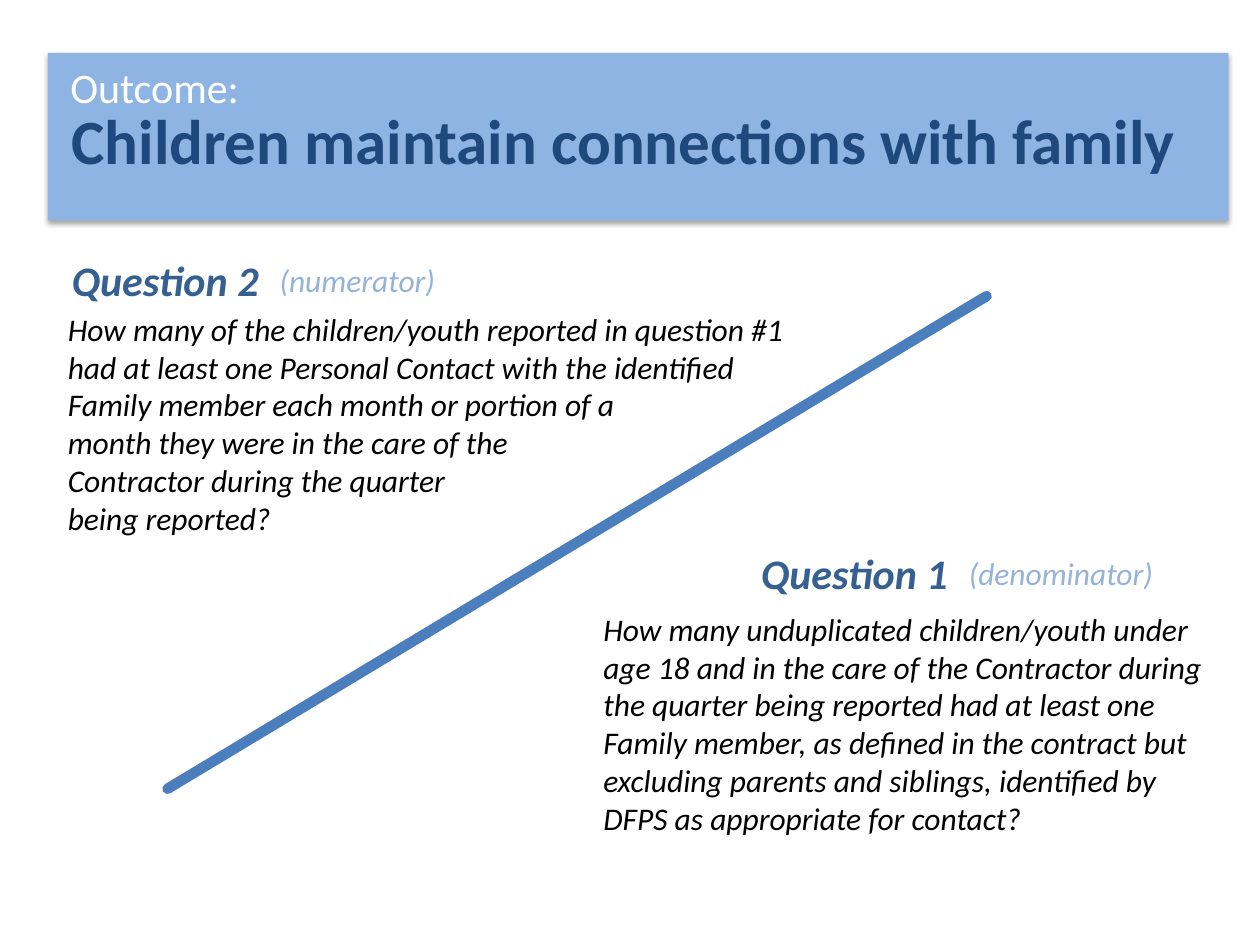
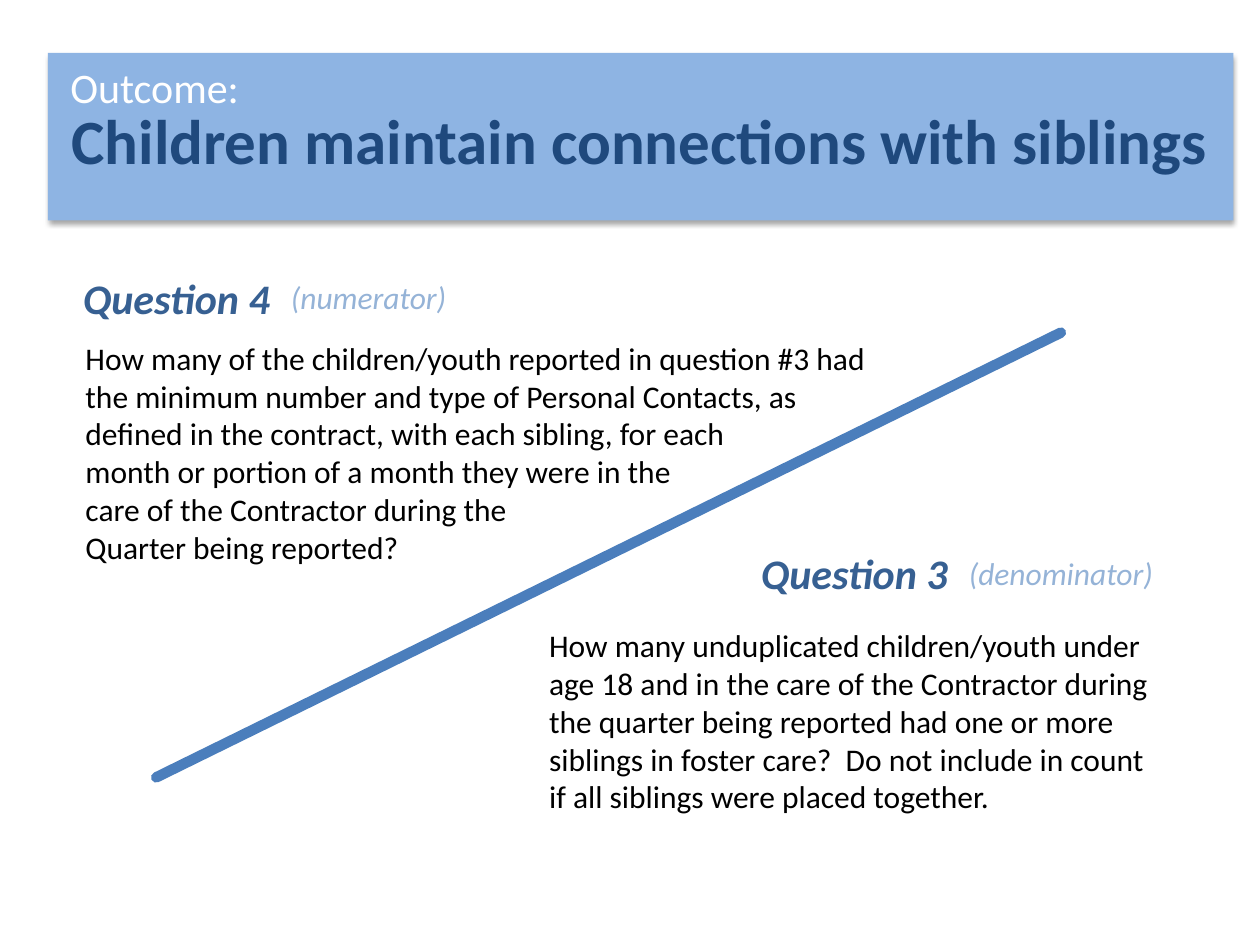
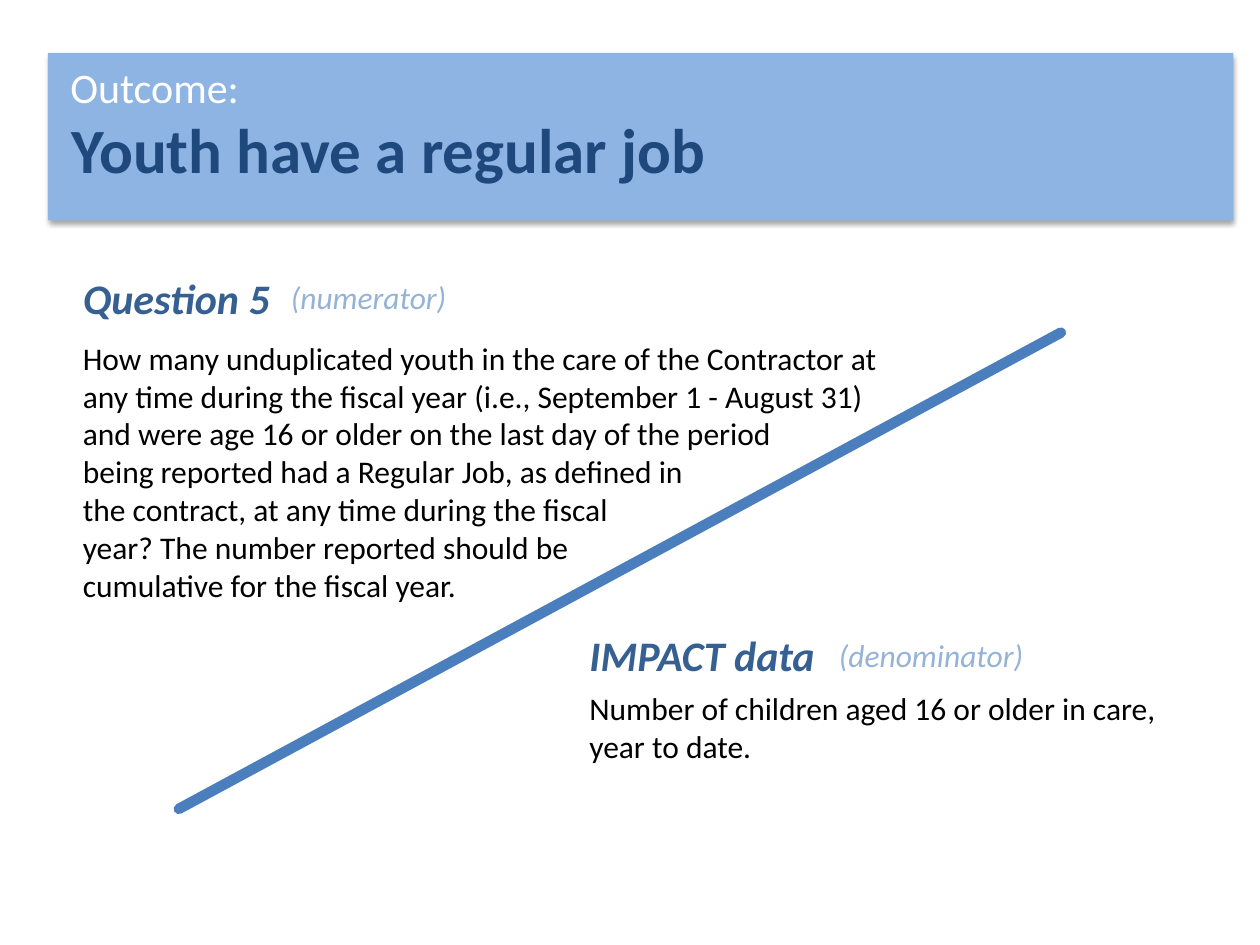
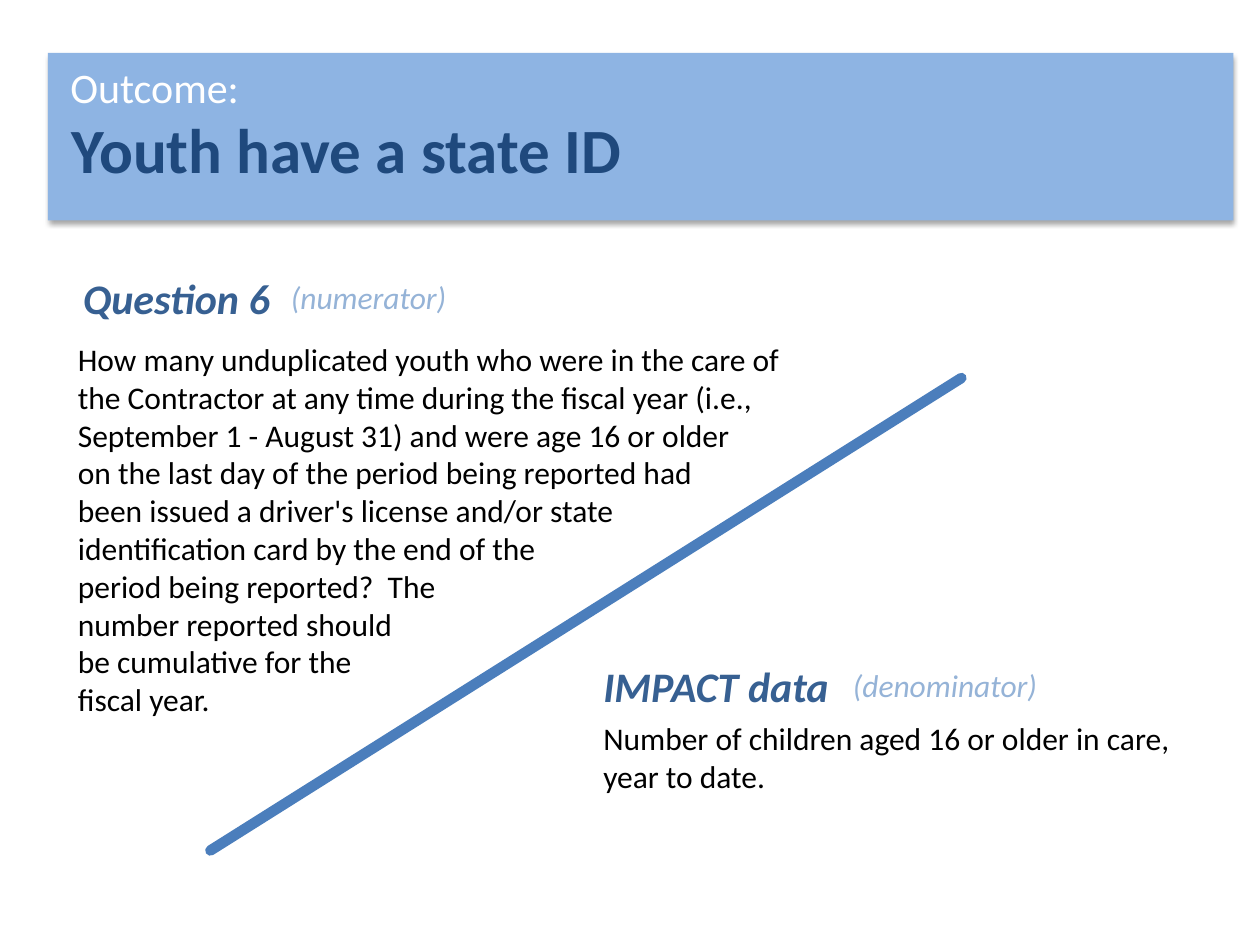
from dataclasses import dataclass

from lxml.etree import SubElement
from pptx import Presentation
from pptx.dml.color import RGBColor
from pptx.enum.shapes import MSO_CONNECTOR, MSO_SHAPE
from pptx.enum.text import MSO_AUTO_SIZE
from pptx.oxml.ns import qn
from pptx.util import Inches, Pt

# The slide is a grid of 10 columns by 7.5 rows with square cells.
COLS, ROWS = 10, 7.5
CELL = Inches(1)

FONT = "Calibri"
BAND = RGBColor(0x8E, 0xB4, 0xE3)
TITLE = RGBColor(0x1F, 0x49, 0x7D)
HEADING = RGBColor(0x37, 0x60, 0x92)
ROLE = RGBColor(0x95, 0xB3, 0xD7)
RULE = RGBColor(0x4B, 0x7E, 0xBC)
WHITE = RGBColor(0xFF, 0xFF, 0xFF)
BLACK = RGBColor(0x00, 0x00, 0x00)

BAND_W = 9.41
HEADING_W, HEADING_H = 2.46, 0.5
ROLE_DY, ROLE_H = 0.05, 0.4
ROLE_W = {"(numerator)": 1.45, "(denominator)": 1.68}
QUESTION_DX, IMPACT_DX = 1.65, 1.98


@dataclass
class Part:
    """One side of the fraction: heading, role beside it and the wording."""
    heading: str
    heading_at: tuple
    body_at: tuple
    paragraphs: list
    role_dx: float = QUESTION_DX
    italic: bool = False


def cells(*counts):
    return [int(n * CELL) for n in counts]


def add_text(slide, box, paragraphs, size, color, bold=False, italic=False, wrap=True):
    sp = slide.shapes.add_textbox(*cells(*box))
    tf = sp.text_frame
    tf.word_wrap = wrap
    tf.auto_size = MSO_AUTO_SIZE.SHAPE_TO_FIT_TEXT
    for i, text in enumerate(paragraphs):
        p = tf.paragraphs[0] if i == 0 else tf.add_paragraph()
        p.text = text
        for r in p.runs:
            r.font.name = FONT
            r.font.size = Pt(size)
            r.font.color.rgb = color
            r.font.bold = bold
            r.font.italic = italic


def add_soft_shadow(sp):
    sp.shadow.inherit = False
    effects = sp._element.spPr.find(qn("a:effectLst"))
    shadow = SubElement(effects, qn("a:outerShdw"), blurRad=str(Pt(3.1)),
                        dist=str(Pt(1.8)), dir="5400000", rotWithShape="0")
    black = SubElement(shadow, qn("a:srgbClr"), val=str(BLACK))
    SubElement(black, qn("a:alpha"), val="35000")


def add_title_band(slide, title, y, w, band_w=BAND_W):
    sp = slide.shapes.add_shape(MSO_SHAPE.RECTANGLE, *cells(0.38, 0.42, band_w, 1.33))
    sp.fill.solid()
    sp.fill.fore_color.rgb = BAND
    sp.line.fill.background()
    add_soft_shadow(sp)
    add_text(slide, (0.46, 0.44, 1.55, 0.5), ["Outcome:"], 24, WHITE, wrap=False)
    add_text(slide, (0.47, y, w, 0.71), [title], 36, TITLE, bold=True, wrap=False)


def add_fraction_line(slide, start, end):
    line = slide.shapes.add_connector(MSO_CONNECTOR.STRAIGHT, *cells(*start, *end))
    line.line.color.rgb = RULE
    line.line.width = Pt(6)
    line.line._get_or_add_ln().set("cap", "rnd")
    SubElement(line._element.spPr, qn("a:effectLst"))


def add_part(slide, part, role):
    x, y = part.heading_at
    add_text(slide, (x + part.role_dx, y + ROLE_DY, ROLE_W[role], ROLE_H), [role],
             18, ROLE, italic=True, wrap=False)
    add_text(slide, (x, y, HEADING_W, HEADING_H), [part.heading], 24, HEADING,
             bold=True, italic=True)
    add_text(slide, part.body_at, part.paragraphs, 18, BLACK, italic=part.italic)


def add_outcome(prs, band, line, numerator, denominator):
    slide = prs.slides.add_slide(prs.slide_layouts[6])
    add_title_band(slide, *band)
    add_fraction_line(slide, *line)
    add_part(slide, numerator, "(numerator)")
    add_part(slide, denominator, "(denominator)")


def impact_part(x, y):
    return Part("IMPACT data", (x, y), (x, y + 0.47, 5, 0.71),
                ["Number of children aged 16 or older in care, year to date."],
                role_dx=IMPACT_DX)


def main():
    prs = Presentation()
    prs.slide_width, prs.slide_height = cells(COLS, ROWS)

    add_outcome(
        prs,
        ("Children maintain connections with family", 0.76, 9.06, 9.37),
        ((1.33, 6.26), (7.83, 2.35)),
        Part("Question 2", (0.47, 1.97), (0.44, 2.41, 7.17, 1.92), [
            "How many of the children/youth reported in question #1\n"
            "had at least one Personal Contact with the identified\n"
            "Family member each month or portion of a\n"
            "month they were in the care of the\n"
            "Contractor during the quarter\n"
            "being reported?",
        ], italic=True),
        Part("Question 1", (5.94, 4.3), (4.69, 4.79, 5.06, 1.92), [
            "How many unduplicated children/youth under age 18 and in the care of "
            "the Contractor during the quarter being reported had at least one "
            "Family member, as defined in the contract but excluding parents and "
            "siblings, identified by DFPS as appropriate for contact?",
        ], italic=True),
    )
    add_outcome(
        prs,
        ("Children maintain connections with siblings", 0.76, 9.33),
        ((1.24, 6.17), (8.42, 2.64)),
        Part("Question 4", (0.56, 2.11), (0.58, 2.64, 6.71, 1.92), [
            "How many of the children/youth reported in question #3 had "
            "the minimum number and type of Personal Contacts, as",
            "defined in the contract, with each sibling, for each",
            "month or portion of a month they were in the",
            "care of the Contractor during the",
            "Quarter being reported?",
        ]),
        Part("Question 3", (5.94, 4.3), (4.26, 4.92, 5, 1.62), [
            "How many unduplicated children/youth under age 18 and in the care of "
            "the Contractor during the quarter being reported had one or more "
            "siblings in foster care?  Do not include in count if all siblings "
            "were placed together.",
        ]),
    )
    add_outcome(
        prs,
        ("Youth have a regular job", 0.83, 5.29),
        ((1.42, 6.42), (8.42, 2.64)),
        Part("Question 5", (0.56, 2.11), (0.56, 2.64, 6.77, 2.22), [
            "How many unduplicated youth in the care of the Contractor at any time "
            "during the fiscal year (i.e., September 1 - August 31) and were age 16 "
            "or older on the last day of the period",
            "being reported had a Regular Job, as defined in",
            "the contract, at any time during the fiscal",
            "year? The number reported should be",
            "cumulative for the fiscal year.",
        ]),
        impact_part(4.58, 4.95),
    )
    add_outcome(
        prs,
        ("Youth have a state ID", 0.83, 4.61),
        ((1.67, 6.75), (7.63, 3)),
        Part("Question 6", (0.56, 2.11), (0.52, 2.65, 6.04, 3.13), [
            "How many unduplicated youth who were in the care of",
            "the Contractor at any time during the fiscal year (i.e.,",
            "September 1 - August 31) and were age 16 or older",
            "on the last day of the period being reported had",
            "been issued a driver's license and/or state",
            "identification card by the end of the",
            "period being reported?  The",
            "number reported should",
            "be cumulative for the",
            "fiscal year.",
        ]),
        impact_part(4.69, 5.19),
    )
    prs.save("out.pptx")


if __name__ == "__main__":
    main()
